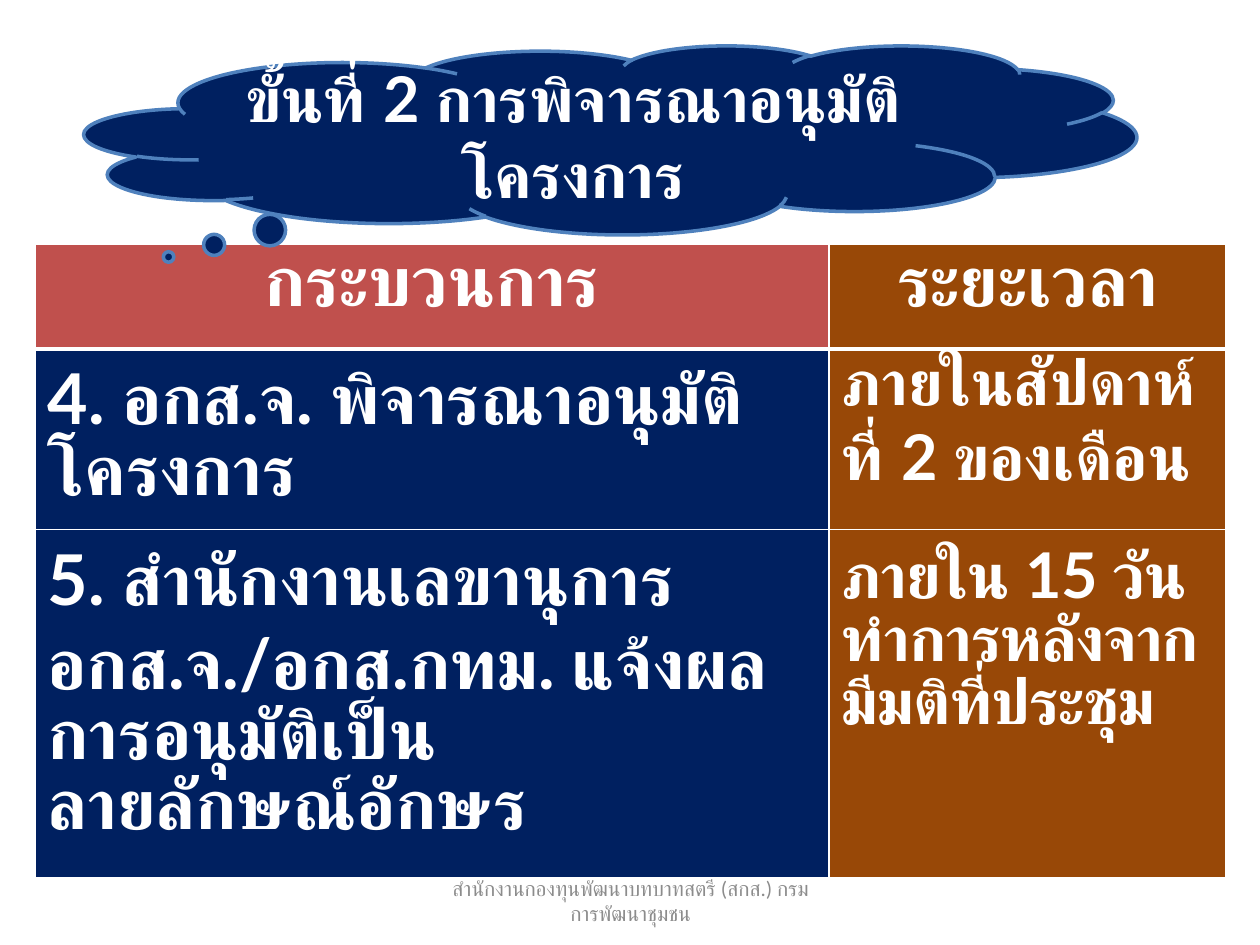
from pptx import Presentation
from pptx.dml.color import RGBColor
from pptx.enum.shapes import MSO_SHAPE
from pptx.enum.text import MSO_ANCHOR, PP_ALIGN
from pptx.oxml.ns import qn
from pptx.util import Inches, Pt
from lxml.etree import SubElement

WHITE = RGBColor(0xFF, 0xFF, 0xFF)
GRAY = RGBColor(0x8C, 0x8C, 0x8C)
NAVY = RGBColor(0x00, 0x20, 0x60)
BLUE = RGBColor(0x4F, 0x81, 0xBD)
RED = RGBColor(0xC0, 0x50, 0x4D)
BROWN = RGBColor(0x98, 0x48, 0x07)


def put_text(frame, text, size=40, font="Lato", color=WHITE, bold=True,
             align=PP_ALIGN.LEFT, space=0):
    frame.word_wrap = True
    para = frame.paragraphs[0]
    para.text = text
    para.alignment = align
    for run in para.runs:
        run.font.size = Pt(size)
        run.font.name = font
        run.font.bold = bold
        run.font.color.rgb = color
        if space:
            run._r.get_or_add_rPr().set("spc", str(int(space * 100)))


def set_edge(props, side, width):
    line = SubElement(props, qn("a:" + side), w=str(Pt(width)))
    fill = SubElement(line, qn("a:solidFill"))
    SubElement(fill, qn("a:srgbClr"), val=str(WHITE))


deck = Presentation()
deck.slide_width = Inches(10)
deck.slide_height = Inches(7.5)
slide = deck.slides.add_slide(deck.slide_layouts[6])

footer = slide.shapes.add_textbox(Inches(3.42), Inches(6.95), Inches(3.17), Inches(0.4))
footer.text_frame.vertical_anchor = MSO_ANCHOR.MIDDLE
put_text(footer.text_frame, "สำนักงานกองทุนพัฒนาบทบาทสตรี (สกส.) กรมการพัฒนาชุมชน",
         size=12, font="Calibri", color=GRAY, bold=False, align=PP_ALIGN.CENTER)

steps = [
    ("กระบวนการ", "ระยะเวลา"),
    ("4. อกส.จ. พิจารณาอนุมัติโครงการ", "ภายในสัปดาห์ที่ 2 ของเดือน"),
    ("5. สำนักงานเลขานุการ อกส.จ./อกส.กทม. แจ้งผลการอนุมัติเป็น\vลายลักษณ์อักษร",
     "ภายใน 15 วันทำการหลังจากมีมติที่ประชุม"),
]
table = slide.shapes.add_table(3, 2, Inches(0.28), Inches(1.94),
                               Inches(9.45), Inches(4.49)).table
for col, width in zip(table.columns, (6.3, 3.15)):
    col.width = Inches(width)
for row, height in zip(table.rows, (0.83, 1.4, 2.26)):
    row.height = Inches(height)

for r, texts in enumerate(steps):
    for c, text in enumerate(texts):
        cell = table.cell(r, c)
        put_text(cell.text_frame, text,
                 size=36 if r and c else 40,
                 align=PP_ALIGN.LEFT if r else PP_ALIGN.CENTER,
                 space=-0.6 if r == 2 and c else 0)
        props = cell._tc.get_or_add_tcPr()
        for side in ("lnL", "lnR", "lnT", "lnB"):
            thick = (r, side) in ((0, "lnB"), (1, "lnT"))
            set_edge(props, side, 3 if thick else 1)
        cell.fill.solid()
        cell.fill.fore_color.rgb = BROWN if c else NAVY if r else RED

cloud = slide.shapes.add_shape(MSO_SHAPE.CLOUD_CALLOUT, Inches(0.67), Inches(0.36),
                               Inches(8.35), Inches(1.5))
cloud.adjustments[0] = -0.42
cloud.adjustments[1] = 0.62
cloud.shadow.inherit = False
cloud.fill.solid()
cloud.fill.fore_color.rgb = NAVY
cloud.line.color.rgb = BLUE
cloud.line.width = Pt(2)
cloud.text_frame.vertical_anchor = MSO_ANCHOR.MIDDLE
put_text(cloud.text_frame, "ขั้นที่ 2 การพิจารณาอนุมัติโครงการ", size=36,
         align=PP_ALIGN.CENTER)

deck.save("out.pptx")
